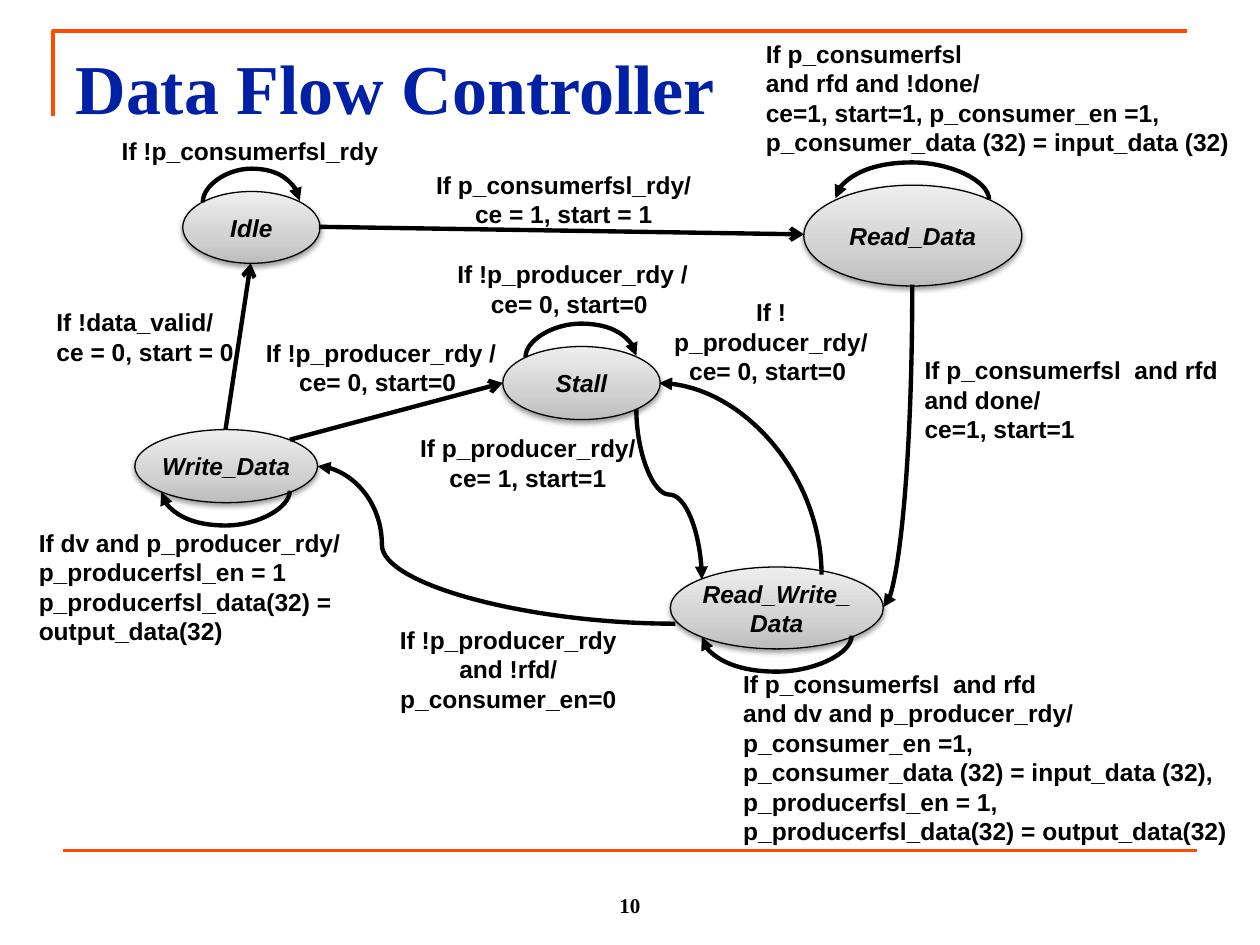
from dataclasses import dataclass
from copy import deepcopy

from pptx import Presentation
from pptx.dml.color import RGBColor
from pptx.enum.shapes import MSO_CONNECTOR, MSO_SHAPE
from pptx.enum.text import MSO_ANCHOR, MSO_AUTO_SIZE, PP_ALIGN
from pptx.oxml import parse_xml
from pptx.oxml.ns import nsdecls, qn
from pptx.util import Inches, Pt

STRAIGHT, CURVE = MSO_CONNECTOR.STRAIGHT, MSO_CONNECTOR.CURVE
LEFT, CENTER = PP_ALIGN.LEFT, PP_ALIGN.CENTER
BLACK, ORANGE, BLUE = "000000", "FF4A00", "0021A5"
GRAY_STOPS = [(0, "BDBDBD"), (0.35, "D1D1D1"), (1, "EEEEEE")]
MIN_SPAN = 0.01  # thickness of a loop's box, which its depth is measured against


@dataclass
class State:
    name: str
    x: float
    y: float
    w: float
    h: float


@dataclass
class Label:
    text: str
    x: float
    y: float
    w: float
    h: float
    align: PP_ALIGN = LEFT


@dataclass
class Curve:
    """bend is the share of the span where an S curve turns; None means a quarter curve."""
    x1: float
    y1: float
    x2: float
    y2: float
    rot: int
    flip: str = ""
    bend: float | None = None


def loop(x1: float, x2: float, y: float, depth: float, rot: int, flip: str = "") -> Curve:
    return Curve(x1, y, x2, y, rot, flip, depth / MIN_SPAN)


STATES = [
    State("Idle", 1.45, 1.52, 1.09, 0.57),
    State("Read_Data", 6.38, 1.47, 1.73, 0.8),
    State("Read_Write_Data", 5.32, 4.5, 1.69, 0.65),
    State("Write_Data", 1.07, 3.41, 1.45, 0.58),
    State("Stall", 3.99, 2.75, 1.25, 0.58),
]
STALLED = "ce= 0, start=0 "
LABELS = [
    Label("If p_consumerfsl_rdy/\nce = 1, start = 1", 3.29, 1.3, 2.37, 0.44, CENTER),
    Label("If p_consumerfsl  and rfd and done/\nce=1, start=1", 7.24, 2.77, 2.87, 0.8),
    Label("If !p_consumerfsl_rdy", 0.37, 1.03, 3.23, 0.26, CENTER),
    Label("If p_consumerfsl  \vand rfd and !done/\nce=1, start=1, p_consumer_en =1, \v"
          "p_consumer_data (32) = input_data (32)", 5.98, 0.26, 4.13, 1.04),
    Label("If !p_producer_rdy and !rfd/\np_consumer_en=0", 2.93, 4.91, 2.21, 0.62, CENTER),
    Label("If dv and p_producer_rdy/\np_producerfsl_en = 1\n"
          "p_producerfsl_data(32) = output_data(32)", 0.21, 4.14, 3.64, 0.8),
    Label(f"If !p_producer_rdy/\n{STALLED}", 5.15, 2.31, 1.94, 0.62, CENTER),
    Label(f"If !p_producer_rdy /\n{STALLED}", 3.52, 2.01, 2.05, 0.62, CENTER),
    Label(f"If !p_producer_rdy /\n{STALLED}", 1.84, 2.63, 2.37, 0.44, CENTER),
    Label("If p_producer_rdy/ ce= 1, start=1", 3.2, 3.39, 1.98, 0.44, CENTER),
    Label("If !data_valid/ \vce = 0, start = 0", 0.35, 2.39, 1.83, 0.44),
    Label("If p_consumerfsl  and rfd \vand dv and p_producer_rdy/\np_consumer_en =1, \v"
          "p_consumer_data (32) = input_data (32),\np_producerfsl_en = 1,\n"
          "p_producerfsl_data(32) = output_data(32)", 5.8, 5.26, 5.55, 1.33),
]
CURVES = [
    loop(1.61, 2.38, 1.6, 0.27, 90, "hv"),
    loop(7.85, 6.63, 1.58, 0.3, 270, "v"),
    loop(6.76, 5.57, 5.05, 0.29, 90),
    loop(2.3, 1.28, 3.9, 0.28, 90),
    loop(4.17, 5.05, 2.83, 0.27, 90, "hv"),
    Curve(7.24, 2.26, 7.01, 4.82, 90),
    Curve(6.52, 4.56, 5.23, 3.04, 270, "v"),
    Curve(5.05, 3.25, 5.57, 4.6, 270, "h", 0.5),
    Curve(5.36, 4.95, 2.52, 3.7, 180, "", 0.82),
]
ARROWS = [(2.3, 3.49, 3.99, 3.04), (1.79, 3.41, 1.99, 2.09), (2.53, 1.8, 6.38, 1.86)]


def rgb(color: str) -> RGBColor:
    return RGBColor.from_string(color)


def set_font(tf, size: float, color: str = BLACK, name: str = "Arial",
             align: PP_ALIGN = LEFT, italic: bool = False) -> None:
    for p in tf.paragraphs:
        p.alignment = align
        font = p.font
        font.name, font.size, font.bold, font.italic = name, Pt(size), True, italic
        font.color.rgb = rgb(color)


def add_line(s, kind, x1: float, y1: float, x2: float, y2: float,
             color: str = BLACK, width: float = 2.5, head: str = ""):
    line = s.shapes.add_connector(kind, Inches(x1), Inches(y1), Inches(x2), Inches(y2))
    line.line.color.rgb = rgb(color)
    line.line.width = Pt(width)
    sp_pr = line._element.spPr
    if head:
        sp_pr.find(qn("a:ln")).append(parse_xml(f'<a:tailEnd {nsdecls("a")} type="{head}"/>'))
    sp_pr.append(parse_xml(f'<a:effectLst {nsdecls("a")}/>'))
    return line


def add_curve(s, c: Curve) -> None:
    line = add_line(s, CURVE, c.x1, c.y1, c.x2, c.y2, head="triangle")
    w, h = abs(c.x2 - c.x1), abs(c.y2 - c.y1)
    if c.rot in (90, 270):
        w, h = max(h, MIN_SPAN), w
    line.left, line.top = Inches((c.x1 + c.x2 - w) / 2), Inches((c.y1 + c.y2 - h) / 2)
    line.width, line.height = Inches(w), Inches(h)
    sp_pr = line._element.spPr
    xfrm = sp_pr.find(qn("a:xfrm"))
    xfrm.set("rot", str(c.rot * 60000))
    for axis in "hv":
        xfrm.set(f"flip{axis.upper()}", str(int(axis in c.flip)))
    geom = sp_pr.find(qn("a:prstGeom"))
    if c.bend is None:
        geom.set("prst", "curvedConnector2")
    else:
        geom.find(qn("a:avLst")).append(parse_xml(
            f'<a:gd {nsdecls("a")} name="adj1" fmla="val {round(c.bend * 100000)}"/>'))


def add_state(s, state: State) -> None:
    sp = s.shapes.add_shape(MSO_SHAPE.OVAL, Inches(state.x), Inches(state.y),
                            Inches(state.w), Inches(state.h))
    sp.fill.gradient()
    sp.fill.gradient_angle = 90
    sp_pr = sp._element.spPr
    stop_list = sp_pr.find(qn("a:gradFill")).find(qn("a:gsLst"))
    stop_list.insert(1, deepcopy(stop_list[0]))
    for stop, (position, color) in zip(sp.fill.gradient_stops, GRAY_STOPS):
        stop.position = position
        stop.color.rgb = rgb(color)
    sp.line.color.rgb = rgb(BLACK)
    sp.line.width = Pt(0.75)
    sp_pr.append(parse_xml(
        f'<a:effectLst {nsdecls("a")}><a:outerShdw blurRad="{Pt(3.1)}" dist="{Pt(1.6)}" '
        f'dir="5400000" rotWithShape="0"><a:srgbClr val="{BLACK}"><a:alpha val="38000"/>'
        '</a:srgbClr></a:outerShdw></a:effectLst>'))
    tf = sp.text_frame
    tf.text = state.name
    tf.word_wrap = True
    tf.vertical_anchor = MSO_ANCHOR.MIDDLE
    tf.margin_left = tf.margin_right = tf.margin_top = tf.margin_bottom = 0
    set_font(tf, 14, align=CENTER, italic=True)


def add_label(s, label: Label):
    tf = s.shapes.add_textbox(Inches(label.x), Inches(label.y),
                              Inches(label.w), Inches(label.h)).text_frame
    tf.text = label.text
    tf.word_wrap = True
    set_font(tf, 14, align=label.align)
    return tf


def add_frame(s) -> None:
    corner = s.shapes.build_freeform(Inches(0.42), Inches(0.92))
    corner.add_line_segments([(Inches(0.42), Inches(0.25)), (Inches(9.42), Inches(0.25))],
                             close=False)
    sp = corner.convert_to_shape()
    sp.fill.background()
    sp.line.color.rgb = rgb(ORANGE)
    sp.line.width = Pt(2.25)
    sp.shadow.inherit = False
    add_line(s, STRAIGHT, 0.5, 6.75, 9.5, 6.75, ORANGE, 2.25)
    number = add_label(s, Label("10", 4, 6.83, 2, 0.5))
    number.vertical_anchor = MSO_ANCHOR.BOTTOM
    set_font(number, 12, name="Times New Roman", align=CENTER)


def add_title(s, text: str) -> None:
    title = s.shapes.title
    title.left, title.top = Inches(0.5), Inches(0.3)
    title.width, title.height = Inches(9.25), Inches(0.72)
    tf = title.text_frame
    tf.text = text
    tf.auto_size = MSO_AUTO_SIZE.NONE
    tf.vertical_anchor = MSO_ANCHOR.BOTTOM
    tf.margin_bottom = 0
    set_font(tf, 40, BLUE, "Times New Roman")


def main() -> None:
    prs = Presentation()
    prs.slide_width, prs.slide_height = Inches(10), Inches(7.5)
    s = prs.slides.add_slide(prs.slide_layouts[5])
    add_frame(s)
    add_title(s, "Data Flow Controller")
    for state in STATES:
        add_state(s, state)
    for label in LABELS:
        tf = add_label(s, label)
        tf.auto_size = MSO_AUTO_SIZE.SHAPE_TO_FIT_TEXT
    for curve in CURVES:
        add_curve(s, curve)
    for arrow in ARROWS:
        add_line(s, STRAIGHT, *arrow, head="arrow")
    prs.save("out.pptx")


if __name__ == "__main__":
    main()
